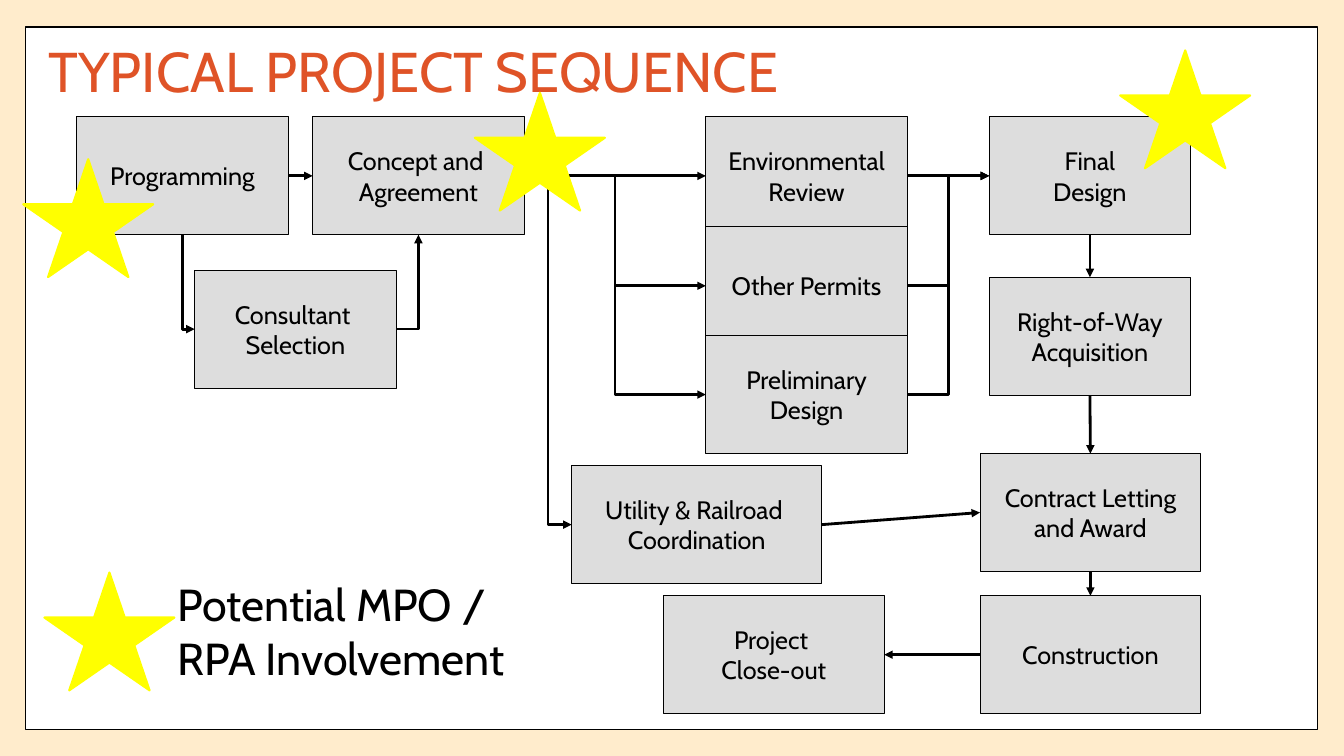
from lxml import etree
from pptx import Presentation
from pptx.dml.color import RGBColor
from pptx.enum import shapes, text
from pptx.oxml import ns
from pptx.util import Inches, Pt

COLORS = {
    "background": "FFECCC", "panel": "FFFFFF", "title": "DF5327",
    "box": "DDDDDD", "ink": "000000", "star": "FFFF00",
}
FONT = "Cabin"
BOX_HEIGHT = 1.17
STAR_WIDTH, STAR_HEIGHT = 1.29, 1.17
TOP, LEFT, BOTTOM, RIGHT = range(4)

BOXES = {
    "programming": (0.76, 1.16, 2.1, "Programming"),
    "concept": (3.1, 1.16, 2.1, "Concept and \nAgreement"),
    "consultant": (1.93, 2.68, 2, "Consultant \vSelection"),
    "environmental": (7, 1.16, 2, "Environmental\nReview"),
    "permits": (7, 2.25, 2, "Other Permits"),
    "preliminary": (7, 3.33, 2, "Preliminary\nDesign"),
    "final": (9.81, 1.16, 2, "Final\nDesign"),
    "right_of_way": (9.81, 2.75, 2, "Right-of-Way\nAcquisition"),
    "utility": (5.67, 4.62, 2.48, "Utility & Railroad \nCoordination"),
    "letting": (9.72, 4.5, 2.19, "Contract Letting\nand Award"),
    "construction": (9.72, 5.91, 2.19, "Construction"),
    "close_out": (6.58, 5.91, 2.19, "Project \nClose-out"),
}

ARROWS = [
    ("programming", RIGHT, "concept", LEFT, "line"),
    ("programming", BOTTOM, "consultant", LEFT, "down_then_right"),
    ("consultant", RIGHT, "concept", BOTTOM, "right_then_up"),
    ("concept", RIGHT, "environmental", LEFT, "line"),
    ("concept", RIGHT, "permits", LEFT, "elbow"),
    ("concept", RIGHT, "preliminary", LEFT, "elbow"),
    ("environmental", RIGHT, "final", LEFT, "line"),
    ("preliminary", RIGHT, "final", LEFT, "elbow"),
    ("permits", RIGHT, "final", LEFT, "elbow"),
    ("final", BOTTOM, "right_of_way", TOP, "line"),
    ("concept", RIGHT, "utility", LEFT, "elbow"),
    ("right_of_way", BOTTOM, "letting", TOP, "line"),
    ("utility", RIGHT, "letting", LEFT, "line"),
    ("letting", BOTTOM, "construction", TOP, "line"),
    ("construction", LEFT, "close_out", RIGHT, "line"),
]

STARS = [(0.23, 1.58), (4.71, 0.92), (11.11, 0.5)]


def color(name):
    return RGBColor.from_string(COLORS[name])


def set_font(paragraph, size, name):
    paragraph.font.name = FONT
    paragraph.font.size = Pt(size)
    paragraph.font.color.rgb = color(name)


def add_filled(slide, kind, box, fill, line, line_width):
    shape = slide.shapes.add_shape(kind, *map(Inches, box))
    shape.shadow.inherit = False
    shape.fill.solid()
    shape.fill.fore_color.rgb = color(fill)
    shape.line.color.rgb = color(line)
    shape.line.width = Pt(line_width)
    return shape


def add_panel(slide, box):
    slide.background.fill.solid()
    slide.background.fill.fore_color.rgb = color("background")
    panel = add_filled(slide, shapes.MSO_SHAPE.RECTANGLE, box, "panel", "ink", 1)
    slide.shapes.title._element.addprevious(panel._element)


def add_title(slide, box):
    title = slide.shapes.title
    title.left, title.top, title.width, title.height = map(Inches, box)
    frame = title.text_frame
    frame.text = "TYPICAL PROJECT SEQUENCE"
    frame.auto_size = text.MSO_AUTO_SIZE.NONE
    frame.vertical_anchor = text.MSO_ANCHOR.MIDDLE
    paragraph = frame.paragraphs[0]
    paragraph.alignment = text.PP_ALIGN.LEFT
    paragraph.line_spacing = 0.85
    set_font(paragraph, 40, "title")


def add_step(slide, left, top, width, label):
    box = (left, top, width, BOX_HEIGHT)
    step = add_filled(slide, shapes.MSO_SHAPE.FLOWCHART_PROCESS, box, "box", "ink", 0.75)
    frame = step.text_frame
    frame.text = label
    frame.word_wrap = False
    frame.vertical_anchor = text.MSO_ANCHOR.MIDDLE
    for paragraph in frame.paragraphs:
        paragraph.alignment = text.PP_ALIGN.CENTER
        set_font(paragraph, 18, "ink")
    return step


def turn_down_then_right(connector):
    run, drop = connector.width, connector.height
    middle_x = connector.left + run // 2
    middle_y = connector.top + drop // 2
    connector.left, connector.top = middle_x - drop // 2, middle_y - run // 2
    connector.width, connector.height = drop, run
    transform = connector._element.spPr.find(ns.qn("a:xfrm"))
    transform.set("rot", "16200000")
    transform.set("flipH", "1")


def add_arrow(slide, start, start_side, end, end_side, route):
    kind = shapes.MSO_CONNECTOR.STRAIGHT if route == "line" else shapes.MSO_CONNECTOR.ELBOW
    connector = slide.shapes.add_connector(kind, 0, 0, 0, 0)
    connector.begin_connect(start, start_side)
    connector.end_connect(end, end_side)
    connector.line.color.rgb = color("ink")
    connector.line.width = Pt(2)
    properties = connector._element.spPr
    if "then" in route:
        properties.find(ns.qn("a:prstGeom")).set("prst", "bentConnector2")
    if route == "down_then_right":
        turn_down_then_right(connector)
    etree.SubElement(properties.find(ns.qn("a:ln")), ns.qn("a:tailEnd"), type="triangle")
    etree.SubElement(properties, ns.qn("a:effectLst"))


def add_star(slide, left, top):
    box = (left, top, STAR_WIDTH, STAR_HEIGHT)
    add_filled(slide, shapes.MSO_SHAPE.STAR_5_POINT, box, "star", "star", 1.5)


def add_flow(slide):
    steps = {name: add_step(slide, *box) for name, box in BOXES.items()}
    for start, start_side, end, end_side, route in ARROWS:
        add_arrow(slide, steps[start], start_side, steps[end], end_side, route)
    for left, top in STARS:
        add_star(slide, left, top)


def add_legend(slide, left, top):
    add_star(slide, left, top)
    label = slide.shapes.add_textbox(
        Inches(left + 1.22), Inches(top - 0.01), Inches(3.55), Inches(1.18))
    frame = label.text_frame
    frame.word_wrap = True
    frame.auto_size = text.MSO_AUTO_SIZE.SHAPE_TO_FIT_TEXT
    frame.text = "Potential MPO / RPA Involvement"
    set_font(frame.paragraphs[0], 32, "ink")


def main():
    presentation = Presentation()
    presentation.slide_width = Inches(13.33)
    presentation.slide_height = Inches(7.5)
    slide = presentation.slides.add_slide(presentation.slide_layouts[5])
    add_panel(slide, (0.25, 0.27, 12.82, 6.97))
    add_title(slide, (0.38, 0.16, 10.7, 1.17))
    add_flow(slide)
    add_legend(slide, 0.44, 5.68)
    presentation.save("out.pptx")


if __name__ == "__main__":
    main()
